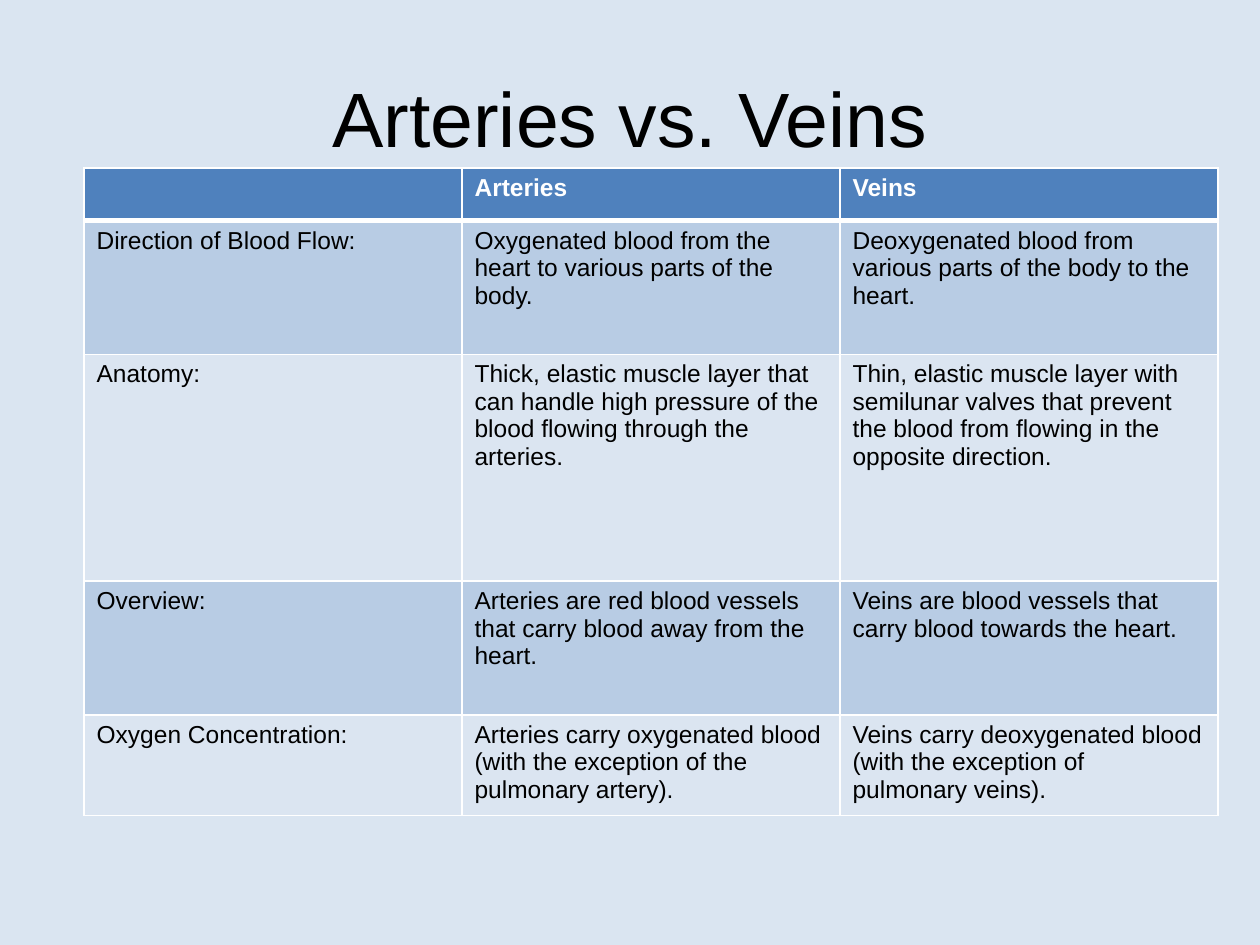
from lxml import etree
from pptx import Presentation
from pptx.dml.color import RGBColor
from pptx.enum import text
from pptx.oxml.ns import qn
from pptx.util import Pt

# Content
TITLE = "Arteries vs. Veins"
ROWS = [
    ("", "Arteries", "Veins"),
    ("Direction of Blood Flow:",
     "Oxygenated blood from the heart to various parts of the body.",
     "Deoxygenated blood from various parts of the body to the heart."),
    ("Anatomy:",
     "Thick, elastic muscle layer that can handle high pressure of the blood "
     "flowing through the arteries.",
     "Thin, elastic muscle layer with semilunar valves that prevent the blood "
     "from flowing in the opposite direction."),
    ("Overview:",
     "Arteries are red blood vessels that carry blood away from the heart.",
     "Veins are blood vessels that carry blood towards the heart."),
    ("Oxygen Concentration:",
     "Arteries carry oxygenated blood (with the exception of the pulmonary artery).",
     "Veins carry deoxygenated blood (with the exception of pulmonary veins)."),
]
ROW_HEIGHTS = [30, 76.5, 129.5, 76.5, 54.5]
COLUMN_WIDTH = 216

FONT = "Arial"
BACKGROUND = RGBColor(0xDA, 0xE5, 0xF1)
HEADER = RGBColor(0x4F, 0x81, 0xBD)
BANDS = [RGBColor(0xDB, 0xE5, 0xF1), RGBColor(0xB8, 0xCC, 0xE4)]
BLACK = RGBColor(0, 0, 0)
WHITE = RGBColor(0xFF, 0xFF, 0xFF)


def write(frame, content, size, color, bold=False):
    frame.text = content
    paragraph = frame.paragraphs[0]
    paragraph.font.size = Pt(size)
    for run in paragraph.runs:
        run.font.name = FONT
        run.font.size = Pt(size)
        run.font.bold = bold
        run.font.color.rgb = color
    return paragraph


def set_borders(cell, widths):
    """Draw white borders; they must precede the fill in the cell properties."""
    properties = cell._tc.get_or_add_tcPr()
    for index, (side, width) in enumerate(widths.items()):
        line = etree.Element(qn(f"a:ln{side}"), w=str(Pt(width)))
        fill = etree.SubElement(line, qn("a:solidFill"))
        etree.SubElement(fill, qn("a:srgbClr"), val=str(WHITE))
        properties.insert(index, line)


presentation = Presentation()
presentation.slide_width, presentation.slide_height = Pt(720), Pt(540)
slide = presentation.slides.add_slide(presentation.slide_layouts[6])
slide.background.fill.solid()
slide.background.fill.fore_color.rgb = BACKGROUND

# Title
title = slide.shapes.add_textbox(Pt(36), Pt(21.6), Pt(648), Pt(90))
title.text_frame.word_wrap = True
title.text_frame.vertical_anchor = text.MSO_ANCHOR.MIDDLE
write(title.text_frame, TITLE, 44, BLACK).alignment = text.PP_ALIGN.CENTER

# Comparison table
column_count = len(ROWS[0])
table = slide.shapes.add_table(
    len(ROWS), column_count, Pt(48), Pt(96),
    Pt(COLUMN_WIDTH * column_count), Pt(sum(ROW_HEIGHTS))).table
for column in table.columns:
    column.width = Pt(COLUMN_WIDTH)

for row_index, (values, height) in enumerate(zip(ROWS, ROW_HEIGHTS)):
    table.rows[row_index].height = Pt(height)
    is_header = row_index == 0
    # The line under the header is thicker than the rest
    borders = {"L": 1, "R": 1, "T": 3 if row_index == 1 else 1, "B": 3 if is_header else 1}
    for column_index, value in enumerate(values):
        cell = table.cell(row_index, column_index)
        cell.fill.solid()
        cell.fill.fore_color.rgb = HEADER if is_header else BANDS[row_index % 2]
        write(cell.text_frame, value, 14, WHITE if is_header else BLACK, is_header)
        set_borders(cell, borders)

presentation.save("out.pptx")
